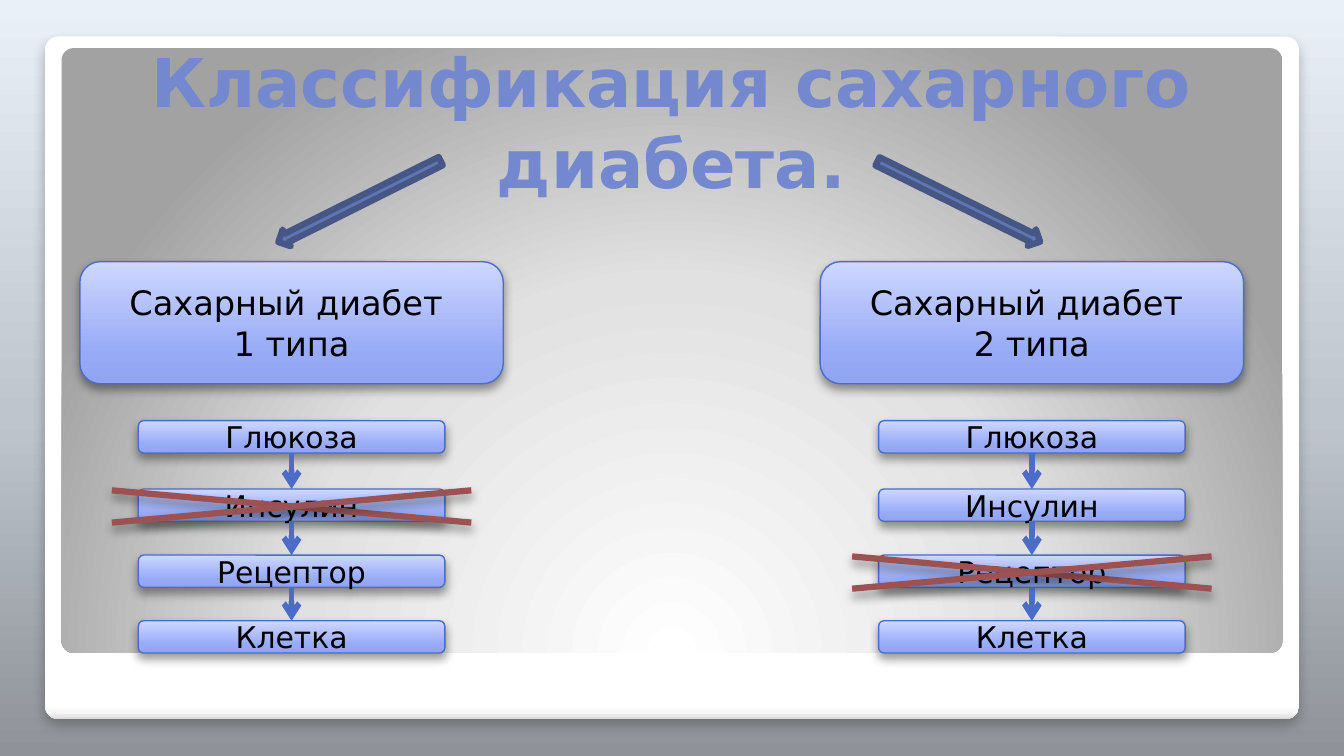
"""Build a slide that compares the two types of diabetes."""
from lxml.etree import SubElement
from pptx import Presentation
from pptx.dml.color import RGBColor
from pptx.enum.shapes import MSO_CONNECTOR, MSO_SHAPE
from pptx.enum.text import MSO_ANCHOR, MSO_AUTO_SIZE, PP_ALIGN
from pptx.oxml.ns import qn
from pptx.util import Pt

FONT = "DejaVu Sans"
BLUE = "4B6CC9"
BOX_STOPS = [(0, "90A4F1"), (25, "97AAF6"), (100, "CDD7FF")]
BOX_SHADOW = (40, 5.2, 3)
color = RGBColor.from_string


def set_gradient(fill, properties, stops, angle=None):
    """Fill with the stops, along an angle or, without one, from a circle."""
    fill.gradient()
    gradient = properties.find(qn("a:gradFill"))
    for child in list(gradient):
        gradient.remove(child)
    stop_list = SubElement(gradient, qn("a:gsLst"))
    for position, value in stops:
        stop = SubElement(stop_list, qn("a:gs"), pos=str(position * 1000))
        SubElement(stop, qn("a:srgbClr"), val=value)
    if angle is None:
        circle = SubElement(gradient, qn("a:path"), path="circle")
        SubElement(circle, qn("a:fillToRect"), l="50000", t="175000", r="50000", b="-75000")
    else:
        SubElement(gradient, qn("a:lin"), ang=str(angle * 60000), scaled="0")


def set_shadow(shape, shadow=None):
    """Give a shape a downward shadow (opacity, blur, distance) or none."""
    effects = SubElement(shape._element.spPr, qn("a:effectLst"))
    if shadow:
        opacity, blur, distance = shadow
        outer = SubElement(effects, qn("a:outerShdw"), blurRad=str(Pt(blur)),
                           dist=str(Pt(distance)), dir="5400000", rotWithShape="0")
        black = SubElement(outer, qn("a:srgbClr"), val="000000")
        SubElement(black, qn("a:alpha"), val=str(opacity * 1000))


deck = Presentation()
deck.slide_width, deck.slide_height = Pt(720), Pt(405)
page = deck.slides.add_slide(deck.slide_layouts[5])
shapes = page.shapes
background = page.background.fill
background.gradient()
set_gradient(background, page._element.cSld.bg.bgPr,
             [(0, "8F9399"), (45, "BEC5CD"), (100, "EAF0F7")], 270)

frame_stops = [(0, "FFFFFF"), (98, "FFFFFF"), (99, "F7F7F7"), (100, "DADADA")]
panel_stops = [(0, "FFFFFF"), (55, "E1E1E1"), (100, "A2A2A2")]
panels = [
    ((24, 19.6, 672, 365.6), frame_stops, 90, (25, 6, 4)),
    ((33, 25.8, 654, 324), panel_stops, None, None),
]
for order, (place, stops, angle, shadow) in enumerate(panels):
    panel = shapes.add_shape(MSO_SHAPE.ROUNDED_RECTANGLE, *map(Pt, place))
    panel.adjustments[0] = 0.02
    set_gradient(panel.fill, panel._element.spPr, stops, angle)
    panel.line.fill.background()
    set_shadow(panel, shadow)
    shapes._spTree.insert(2 + order, panel._element)

title = shapes.title
title.left, title.top, title.width, title.height = Pt(31), Pt(26.6), Pt(657.4), Pt(85)
title.text_frame.text = "Классификация сахарного диабета."
title.text_frame.auto_size = MSO_AUTO_SIZE.NONE
title.text_frame.vertical_anchor = MSO_ANCHOR.BOTTOM
heading = title.text_frame.paragraphs[0]
heading.alignment = PP_ALIGN.CENTER
heading.font.name, heading.font.size, heading.font.bold = FONT, Pt(36), True
heading.font.color.rgb = color("7388CE")

steps = ["Глюкоза", "Инсулин", "Рецептор", "Клетка"]
step_tops = [225.4, 262, 297.4, 332.6]
step_height, step_width = 17.3, 164.2
columns = [
    ("Сахарный диабет \n1 типа", 156.2, 144, 153.5, "Инсулин"),
    ("Сахарный диабет \n2 типа", 552.8, 465.1, 26.3, "Рецептор"),
]
for name, center, arrow_left, rotation, blocked in columns:
    arrow = shapes.add_shape(MSO_SHAPE.RIGHT_ARROW, Pt(arrow_left), Pt(103), Pt(97.2), Pt(10))
    arrow.rotation = rotation
    arrow.fill.solid()
    arrow.fill.fore_color.rgb = color("6076B4")
    arrow.line.color.rgb = color("475785")
    arrow.line.width = Pt(3.35)
    set_shadow(arrow)

    boxes = [(name, 140.2, 226.8, 65.4, 18)]
    boxes += [(step, top, step_width, step_height, 16) for step, top in zip(steps, step_tops)]
    for text, top, width, height, size in boxes:
        box = shapes.add_shape(MSO_SHAPE.ROUNDED_RECTANGLE, Pt(center - width / 2), Pt(top),
                               Pt(width), Pt(height))
        set_gradient(box.fill, box._element.spPr, BOX_STOPS, 270)
        box.line.color.rgb = color(BLUE)
        box.line.width = Pt(0.75)
        set_shadow(box, BOX_SHADOW)
        box.text_frame.text = text
        box.text_frame.vertical_anchor = MSO_ANCHOR.MIDDLE
        for para in box.text_frame.paragraphs:
            para.alignment = PP_ALIGN.CENTER
            para.font.name, para.font.size = FONT, Pt(size)
            para.font.color.rgb = color("000000")

    links = [((center, top + step_height, center, following), BLUE, 3)
             for top, following in zip(step_tops, step_tops[1:])]
    cross_top = step_tops[steps.index(blocked)] + 0.7
    cross_bottom = cross_top + step_height
    left, right = center - 96.3, center + 96.3
    links += [((left, cross_top, right, cross_bottom), "9C5252", 3.35),
              ((right, cross_top, left, cross_bottom), "9C5252", 3.35)]
    for ends, value, width in links:
        link = shapes.add_connector(MSO_CONNECTOR.STRAIGHT, *map(Pt, ends))
        link.line.color.rgb = color(value)
        link.line.width = Pt(width)
        if value == BLUE:
            SubElement(link.line._get_or_add_ln(), qn("a:tailEnd"), type="arrow")
        set_shadow(link, None if value == BLUE else BOX_SHADOW)

deck.save("out.pptx")
